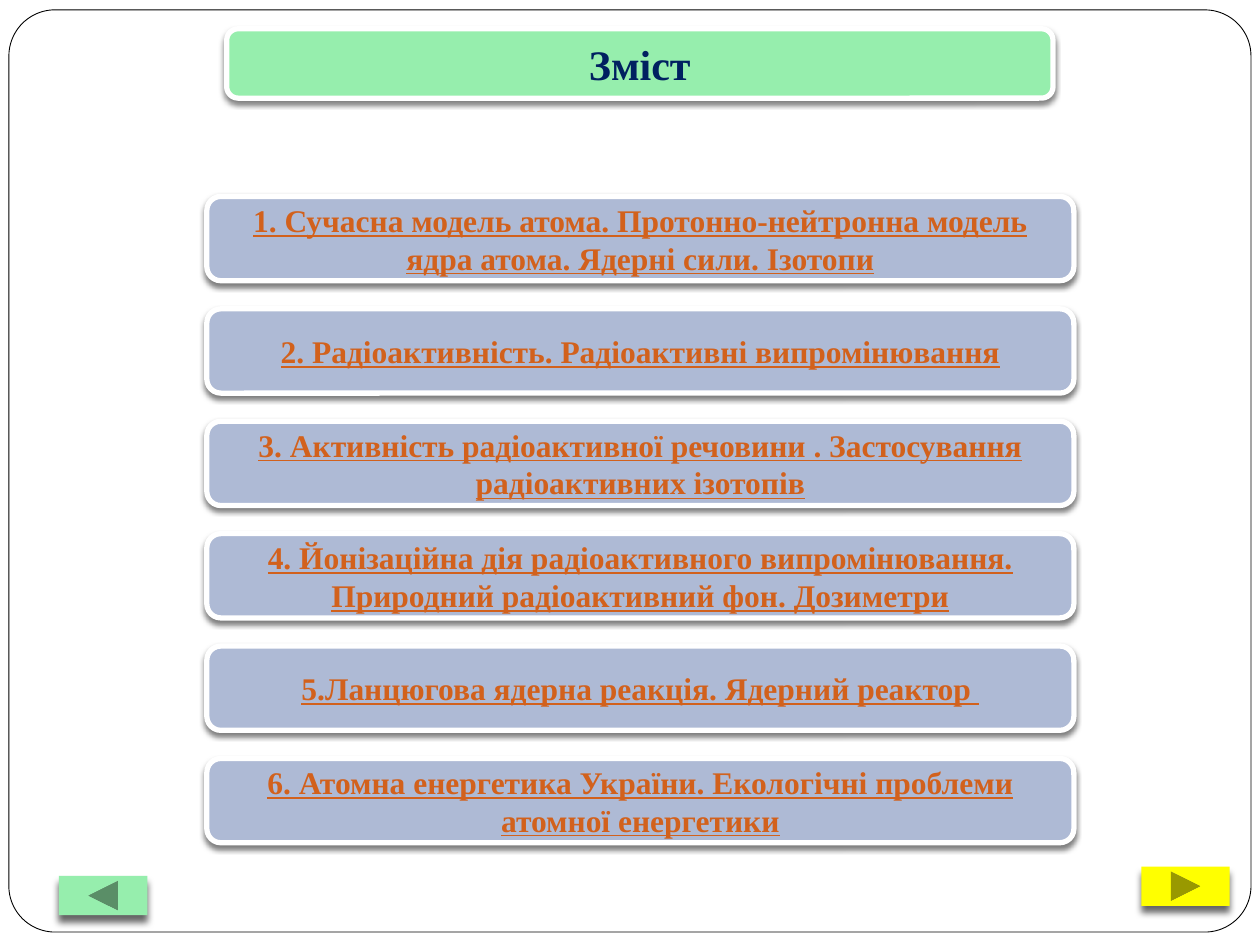
import lxml.etree
import pptx
import pptx.dml.color
import pptx.enum.shapes
import pptx.enum.text
import pptx.oxml.ns
import pptx.util

Cm = pptx.util.Cm
Pt = pptx.util.Pt
SHAPES = pptx.enum.shapes.MSO_SHAPE
FONT = "Times New Roman"
COLORS = {
    "white": "FFFFFF",
    "black": "000000",
    "green": "96EEAD",
    "yellow": "FFFF00",
    "panel": "AEBAD5",
    "title": "002060",
    "topic": "D2611C",
}
TOPICS = [
    "1. Сучасна модель атома. Протонно-нейтронна модель ядра атома. Ядерні сили. Ізотопи",
    "2. Радіоактивність. Радіоактивні випромінювання",
    "3. Активність радіоактивної речовини . Застосування радіоактивних ізотопів",
    "4. Йонізаційна дія радіоактивного випромінювання. Природний радіоактивний фон. Дозиметри",
    "5.Ланцюгова ядерна реакція. Ядерний реактор ",
    "6. Атомна енергетика України. Екологічні проблеми атомної енергетики",
]


def color(name):
    return pptx.dml.color.RGBColor.from_string(COLORS[name])


def add_block(page, kind, box, fill, line=None, width=0):
    block = page.shapes.add_shape(kind, *[Cm(length) for length in box])
    block.shadow.inherit = False
    block.fill.solid()
    block.fill.fore_color.rgb = color(fill)
    if line:
        block.line.color.rgb = color(line)
        block.line.width = Pt(width)
    else:
        block.line.fill.background()
    return block


def add_shadow(block, opacity, blur, distance):
    qn = pptx.oxml.ns.qn
    effects = block._element.spPr.find(qn("a:effectLst"))
    shadow = lxml.etree.SubElement(
        effects, qn("a:outerShdw"), blurRad=str(Pt(blur)), dist=str(Pt(distance)),
        dir="5400000", algn="ctr", rotWithShape="0")
    tint = lxml.etree.SubElement(shadow, qn("a:srgbClr"), val=COLORS["black"])
    lxml.etree.SubElement(tint, qn("a:alpha"), val=str(opacity * 1000))


def add_label(page, kind, box, fill, text, size, text_color, underline=False):
    label = add_block(page, kind, box, fill, "white", 3)
    add_shadow(label, 50, 3, 2)
    frame = label.text_frame
    frame.word_wrap = True
    frame.vertical_anchor = pptx.enum.text.MSO_ANCHOR.MIDDLE
    frame.text = text
    para = frame.paragraphs[0]
    para.alignment = pptx.enum.text.PP_ALIGN.CENTER
    font = para.runs[0].font
    font.name = FONT
    font.size = Pt(size)
    font.bold = True
    font.underline = underline
    font.color.rgb = color(text_color)


def add_frame(page, box):
    frame = add_block(page, SHAPES.ROUNDED_RECTANGLE, box, "white", "black", 0.5)
    frame.adjustments[0] = 0.05


def add_title(page, box):
    add_label(page, SHAPES.ROUNDED_RECTANGLE, box, "green", "Зміст", 24, "title")


def add_contents(page, box):
    left, top, width, height = box
    row_height = 1.7
    pitch = (height - row_height) / (len(TOPICS) - 1)
    for index, topic in enumerate(TOPICS):
        row = (left, top + index * pitch, width, row_height)
        add_label(page, SHAPES.FLOWCHART_ALTERNATE_PROCESS, row, "panel",
                  topic, 18, "topic", underline=True)


def add_navigation(page, box):
    left, top, width, height = box
    button_width, button_height = 1.78, 0.79
    buttons = [
        (SHAPES.ACTION_BUTTON_FORWARD_OR_NEXT, left + width - button_width, top, "yellow"),
        (SHAPES.ACTION_BUTTON_BACK_OR_PREVIOUS, left, top + height - button_height, "green"),
    ]
    for kind, x, y, fill in buttons:
        button = add_block(page, kind, (x, y, button_width, button_height), fill)
        add_shadow(button, 60, 4, 4)


def main():
    deck = pptx.Presentation()
    deck.slide_width = Cm(25.4)
    deck.slide_height = Cm(19.05)
    page = deck.slides.add_slide(deck.slide_layouts[6])
    add_frame(page, (0.18, 0.2, 25.04, 18.59))
    add_title(page, (4.57, 0.58, 16.66, 1.4))
    add_contents(page, (4.17, 3.96, 17.48, 13.03))
    add_navigation(page, (1.19, 17.47, 23.6, 0.98))
    deck.save("out.pptx")


if __name__ == "__main__":
    main()
